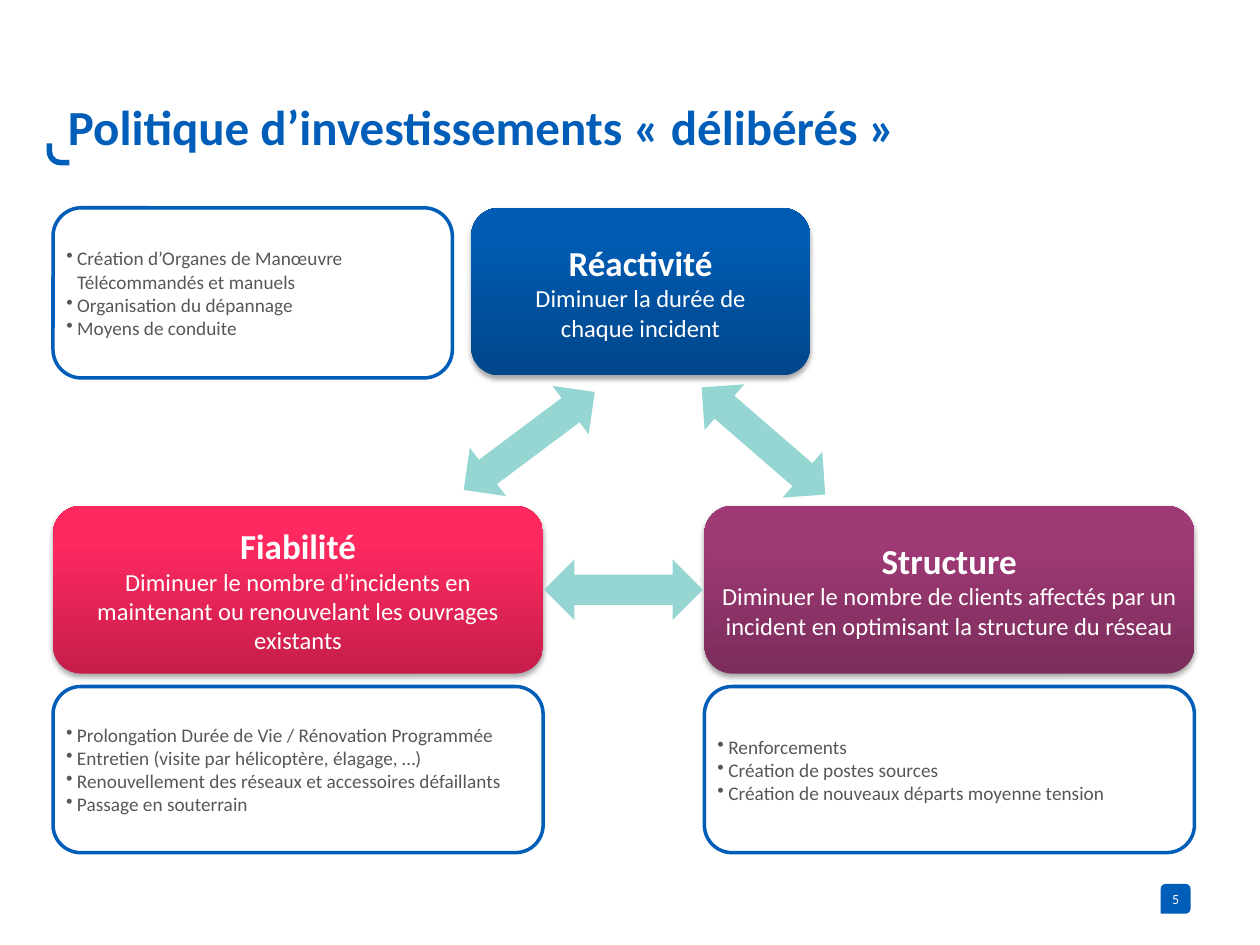
"""Build the slide on deliberate investment policy."""
import copy
import math

from lxml import etree
from pptx import Presentation
from pptx import util as u
from pptx.dml.color import RGBColor
from pptx.enum import shapes, text
from pptx.oxml import ns

COLORS = {"blue": "005EB8", "white": "FFFFFF", "grey": "575757", "teal": "95D5D2", "black": "000000"}
GRADIENTS = {
    "blue": ("004689", "005BB2", "005CB3"),
    "red": ("C61E4A", "FF2960", "FF2A61"),
    "purple": ("7B2D5B", "A03A76", "A33877"),
}
FONT = "Calibri"
LEFT, RIGHT, WIDE = 1.07, 14.2, 9.88
TOP, MIDDLE, BOTTOM = 4.19, 10.2, 13.84
PILLARS = [
    ((9.5, TOP, 6.83, 3.38), "blue", "Réactivité", "Diminuer la durée de\vchaque incident"),
    ((LEFT, MIDDLE, WIDE, 3.38), "red", "Fiabilité",
     "Diminuer le nombre d’incidents en maintenant ou renouvelant les ouvrages existants"),
    ((RIGHT, MIDDLE, WIDE, 3.38), "purple", "Structure",
     "Diminuer le nombre de clients affectés par un incident en optimisant la structure du réseau"),
]
ACTIONS = [
    ((LEFT, TOP, 8.05, 3.43),
     ["Création d’Organes de Manœuvre\vTélécommandés et manuels",
      "Organisation du dépannage", "Moyens de conduite"]),
    ((RIGHT, BOTTOM, WIDE, 3.35),
     ["Renforcements", "Création de postes sources",
      "Création de nouveaux départs moyenne tension"]),
    ((LEFT, BOTTOM, WIDE, 3.35),
     ["Prolongation Durée de Vie / Rénovation Programmée",
      "Entretien (visite par hélicoptère, élagage, …)",
      "Renouvellement des réseaux et accessoires défaillants", "Passage en souterrain"]),
]
ARROWS = [((9.02, 8.28, 3.3, 1.22), -36.8), ((13.74, 8.28, 3.3, 1.22), 40.9),
          ((10.97, 11.28, 3.2, 1.22), 0)]


def rgb(name):
    """Return the colour of a palette name."""
    return RGBColor.from_string(COLORS[name])


def style_font(paragraph, size, color, bold=False):
    """Set the font of a whole paragraph."""
    font = paragraph.font
    font.name, font.size, font.bold = FONT, u.Pt(size), bold
    font.color.rgb = rgb(color)


def set_frame(frame, anchor, side=0.1, edge=0):
    """Set wrapping, anchor and margins of a text frame."""
    frame.word_wrap = True
    frame.auto_size = text.MSO_AUTO_SIZE.NONE
    frame.vertical_anchor = anchor
    frame.margin_left = frame.margin_right = u.Cm(side)
    frame.margin_top = frame.margin_bottom = u.Cm(edge)


def add_preset(slide, kind, box, color):
    """Add a flat preset shape without outline."""
    shape = slide.shapes.add_shape(kind, *map(u.Cm, box))
    shape.shadow.inherit = False
    shape.fill.solid()
    shape.fill.fore_color.rgb = rgb(color)
    shape.line.fill.background()
    return shape


def add_title(slide, box, wording):
    """Place the title and the hook at its lower left."""
    left, top, width, height = box
    title = slide.shapes.title
    title.left, title.top, title.width, title.height = map(u.Cm, box)
    set_frame(title.text_frame, text.MSO_ANCHOR.BOTTOM)
    title.text_frame.text = wording
    heading = title.text_frame.paragraphs[0]
    heading.alignment = text.PP_ALIGN.LEFT
    heading.line_spacing = 0.8
    style_font(heading, 28, "blue", True)
    hook = add_preset(slide, shapes.MSO_SHAPE.BENT_ARROW,
                      (left - 0.33, top + height - 0.23, 0.46, 0.46), "blue")
    for index, value in enumerate((0.24, 0.15, 0, 0.62)):
        hook.adjustments[index] = value
    hook.element.spPr.find(ns.qn("a:xfrm")).set("flipV", "1")


def add_actions(slide, box, actions):
    """Add an outlined card holding a bulleted list."""
    card = add_preset(slide, shapes.MSO_SHAPE.ROUNDED_RECTANGLE, box, "white")
    card.line.color.rgb = rgb("blue")
    card.line.width = u.Pt(2)
    frame = card.text_frame
    set_frame(frame, text.MSO_ANCHOR.MIDDLE)
    frame.text = "\n".join(actions)
    for paragraph in frame.paragraphs:
        paragraph.alignment = text.PP_ALIGN.LEFT
        properties = paragraph._p.get_or_add_pPr()
        properties.set("marL", str(u.Cm(0.22)))
        properties.set("indent", str(-u.Cm(0.22)))
        etree.SubElement(properties, ns.qn("a:buChar"), char="•")
        style_font(paragraph, 11, "grey")


def add_soft_shadow(shape):
    """Give a shape a soft shadow falling straight down."""
    effects = shape.element.spPr.find(ns.qn("a:effectLst"))
    shadow = etree.SubElement(effects, ns.qn("a:outerShdw"), blurRad=str(u.Pt(3.1)),
                              dist=str(u.Pt(1.8)), dir="5400000", rotWithShape="0")
    tint = etree.SubElement(shadow, ns.qn("a:srgbClr"), val=COLORS["black"])
    etree.SubElement(tint, ns.qn("a:alpha"), val="35000")


def add_pillar(slide, box, gradient, name, aim):
    """Add a shaded card with the name and aim of a pillar."""
    card = add_preset(slide, shapes.MSO_SHAPE.ROUNDED_RECTANGLE, box, "blue")
    card.fill.gradient()
    card.fill.gradient_angle = 90
    stop_list = card.element.spPr.find(ns.qn("a:gradFill")).find(ns.qn("a:gsLst"))
    stop_list.append(copy.deepcopy(stop_list[-1]))
    for stop, position, shade in zip(card.fill.gradient_stops, (0, 0.8, 1), GRADIENTS[gradient]):
        stop.position = position
        stop.color.rgb = RGBColor.from_string(shade)
    add_soft_shadow(card)
    frame = card.text_frame
    set_frame(frame, text.MSO_ANCHOR.MIDDLE, edge=0.1)
    frame.text = f"{name}\n{aim}"
    for paragraph, size, bold in zip(frame.paragraphs, (20, 14), (True, False)):
        paragraph.alignment = text.PP_ALIGN.CENTER
        style_font(paragraph, size, "white", bold)


def add_page_number(slide, box, number):
    """Add a number tab with three rounded corners and a square one."""
    left, top, width, height = box
    radius = 0.1
    outline = [(left, top + height)]
    corners = [(left + radius, top + radius, 180),
               (left + width - radius, top + radius, 270),
               (left + width - radius, top + height - radius, 0)]
    for x, y, start in corners:
        for step in range(7):
            angle = math.radians(start + 15 * step)
            outline.append((x + radius * math.cos(angle), y + radius * math.sin(angle)))
    points = [(u.Cm(x), u.Cm(y)) for x, y in outline]
    builder = slide.shapes.build_freeform(*points[0])
    builder.add_line_segments(points[1:], close=True)
    tab = builder.convert_to_shape()
    tab.shadow.inherit = False
    tab.fill.solid()
    tab.fill.fore_color.rgb = rgb("blue")
    tab.line.fill.background()
    set_frame(tab.text_frame, text.MSO_ANCHOR.MIDDLE, side=0)
    tab.text_frame.text = number
    paragraph = tab.text_frame.paragraphs[0]
    paragraph.alignment = text.PP_ALIGN.CENTER
    style_font(paragraph, 8, "white")


def main():
    """Build and save the slide."""
    deck = Presentation()
    deck.slide_width, deck.slide_height = u.Cm(25.4), u.Cm(19.05)
    slide = deck.slides.add_slide(deck.slide_layouts[5])
    add_page_number(slide, (23.4, 17.82, 0.6, 0.6), "5")
    add_title(slide, (1.27, 0.53, 22.83, 2.59), "Politique d’investissements « délibérés »")
    for box, actions in ACTIONS:
        add_actions(slide, box, actions)
    for pillar in PILLARS:
        add_pillar(slide, *pillar)
    for box, turn in ARROWS:
        arrow = add_preset(slide, shapes.MSO_SHAPE.LEFT_RIGHT_ARROW, box, "teal")
        arrow.rotation = turn
    deck.save("out.pptx")


if __name__ == "__main__":
    main()
